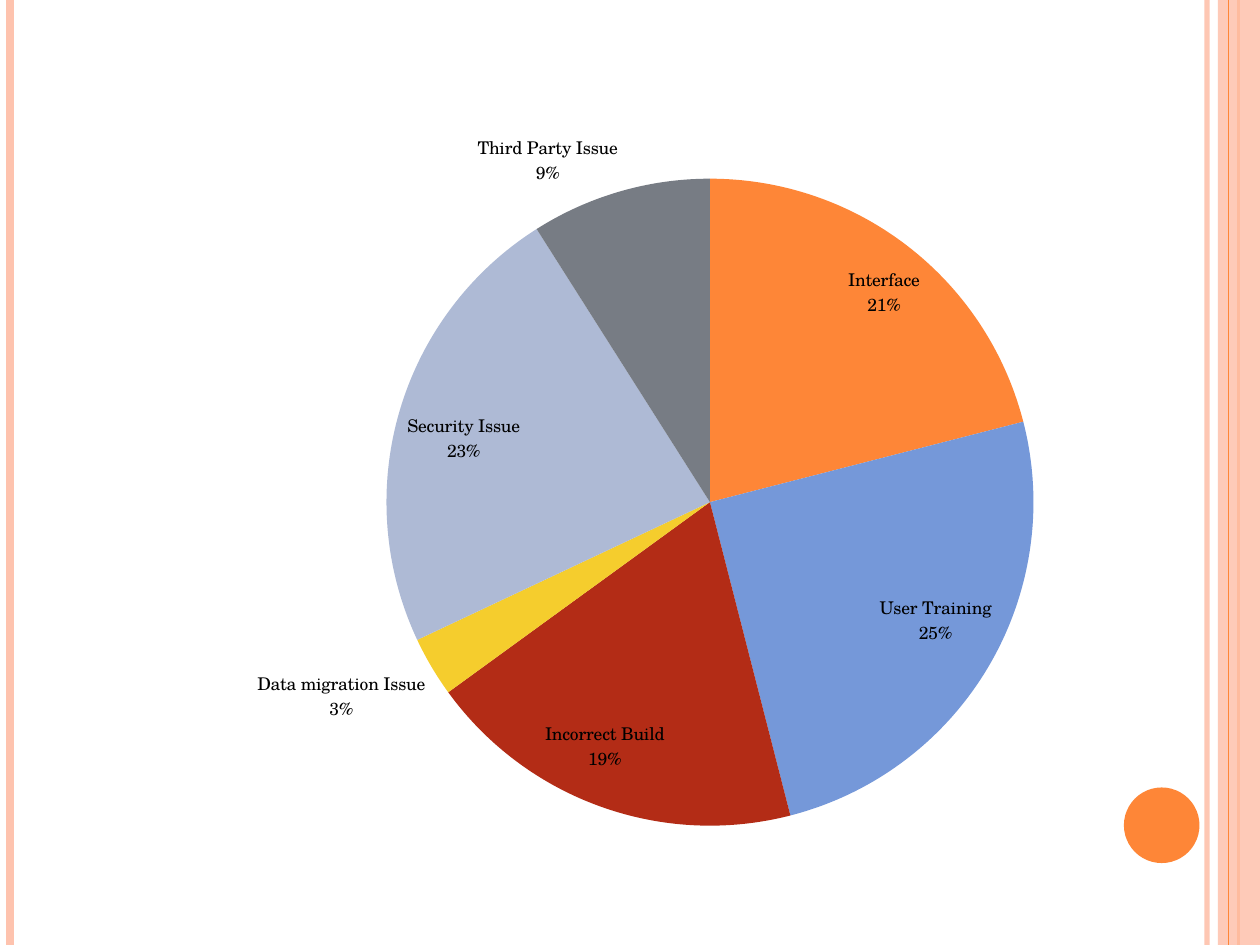
"""Build a slide with a pie chart of issue causes inside a striped frame."""
from typing import NamedTuple

from lxml import etree
from pptx import Presentation
from pptx.chart.data import CategoryChartData
from pptx.dml.color import RGBColor
from pptx.enum.chart import XL_CHART_TYPE, XL_LABEL_POSITION
from pptx.enum.shapes import MSO_CONNECTOR, MSO_SHAPE
from pptx.oxml.ns import qn
from pptx.util import Pt

PIE = XL_CHART_TYPE.PIE
BEST = XL_LABEL_POSITION.BEST_FIT
LINE = MSO_CONNECTOR.STRAIGHT
RECT = MSO_SHAPE.RECTANGLE
OVAL = MSO_SHAPE.OVAL
FONT = "TeX Gyre Schola"
WIDE, HIGH = 720, 540
PINK, FIRE = "FEC3AE", "FE8637"


class Stripe(NamedTuple):
    x: float
    width: float
    color: str
    alpha: int = 100


class Block(NamedTuple):
    kind: MSO_SHAPE
    box: tuple[float, float, float, float]
    color: str
    alpha: int = 100


class Slice(NamedTuple):
    name: str
    value: int
    color: str


BACK = [Stripe(689.76, 3, PINK, 93), Stripe(5.76, 4.5, PINK), Stripe(707.76, 1.5, FIRE)]
BAND = Block(RECT, (696, 0, 24, HIGH), PINK, 87)
EDGE = Stripe(702, 0.75, FIRE)
DISC = Block(OVAL, (642.24, 450, 43.2, 43.2), FIRE)
CHART = (36, 59.76, 660.24, 450)
PLOT = {"x": 0.28, "y": 0.09, "w": 0.56, "h": 0.83}
SLICES = [
    Slice("Interface", 21, FIRE),
    Slice("User Training", 25, "7598D9"),
    Slice("Incorrect Build", 19, "B32C16"),
    Slice("Data migration Issue", 3, "F5CD2D"),
    Slice("Security Issue", 23, "AEBAD5"),
    Slice("Third Party Issue", 9, "777C84"),
]


def paint(fill, color: str, alpha: int = 100) -> None:
    """Set a solid fill from a hex string."""
    fill.solid()
    fill.fore_color.rgb = RGBColor.from_string(color)


def fade(shape, alpha: int) -> None:
    """Give the colour of a shape its opacity in percent."""
    if alpha < 100:
        tone = next(shape._element.spPr.iter(qn("a:srgbClr")))
        etree.SubElement(tone, qn("a:alpha")).set("val", str(alpha * 1000))


def add_stripe(slide, item: Stripe) -> None:
    """Draw a line over the full height of the slide."""
    line = slide.shapes.add_connector(LINE, Pt(item.x), Pt(0), Pt(item.x), Pt(HIGH))
    line.line.width = Pt(item.width)
    paint(line.line.fill, item.color)
    fade(line, item.alpha)
    etree.SubElement(line._element.spPr, qn("a:effectLst"))


def add_block(slide, item: Block) -> None:
    """Draw a filled shape with no outline."""
    shape = slide.shapes.add_shape(item.kind, *map(Pt, item.box))
    shape.shadow.inherit = False
    paint(shape.fill, item.color)
    shape.line.fill.background()
    fade(shape, item.alpha)


def set_plot(chart) -> None:
    """Fix the inner plot area as fractions of the chart."""
    area = next(chart._chartSpace.iter(qn("c:plotArea")))
    for old in area.findall(qn("c:layout")):
        area.remove(old)
    layout = etree.Element(qn("c:layout"))
    manual = etree.SubElement(layout, qn("c:manualLayout"))
    modes = {"layoutTarget": "inner", "xMode": "edge", "yMode": "edge"}
    for key, val in (modes | PLOT).items():
        etree.SubElement(manual, qn(f"c:{key}")).set("val", str(val))
    area.insert(0, layout)


def set_labels(plot) -> None:
    """Show category and percentage on two lines."""
    plot.has_data_labels = True
    labels = plot.data_labels
    labels.show_value = False
    labels.show_category_name = True
    labels.show_percentage = True
    labels.number_format = "0%"
    labels.number_format_is_linked = False
    labels.position = BEST
    gap = etree.Element(qn("c:separator"))
    gap.text = "\n"
    last = [*labels._element.iter(qn("c:showBubbleSize"), qn("c:showPercent"))][-1]
    last.addnext(gap)


def add_pie(slide, items: list[Slice]) -> None:
    """Draw the pie chart with one colour per slice."""
    data = CategoryChartData()
    data.categories = [item.name for item in items]
    data.add_series("Series 1", [item.value for item in items])
    chart = slide.shapes.add_chart(PIE, *map(Pt, CHART), data).chart
    chart.has_legend = False
    chart.has_title = False
    chart.font.name = FONT
    chart.font.size = Pt(10)
    chart.font.color.rgb = RGBColor.from_string("000000")
    plot = chart.plots[0]
    plot.vary_by_categories = True
    for i, item in enumerate(items):
        paint(plot.series[0].points[i].format.fill, item.color)
    set_labels(plot)
    set_plot(chart)


def main() -> None:
    """Build and save the slide."""
    deck = Presentation()
    deck.slide_width, deck.slide_height = Pt(WIDE), Pt(HIGH)
    slide = deck.slides.add_slide(deck.slide_layouts[6])
    for item in BACK:
        add_stripe(slide, item)
    add_block(slide, BAND)
    add_stripe(slide, EDGE)
    add_block(slide, DISC)
    add_pie(slide, SLICES)
    deck.save("out.pptx")


if __name__ == "__main__":
    main()
